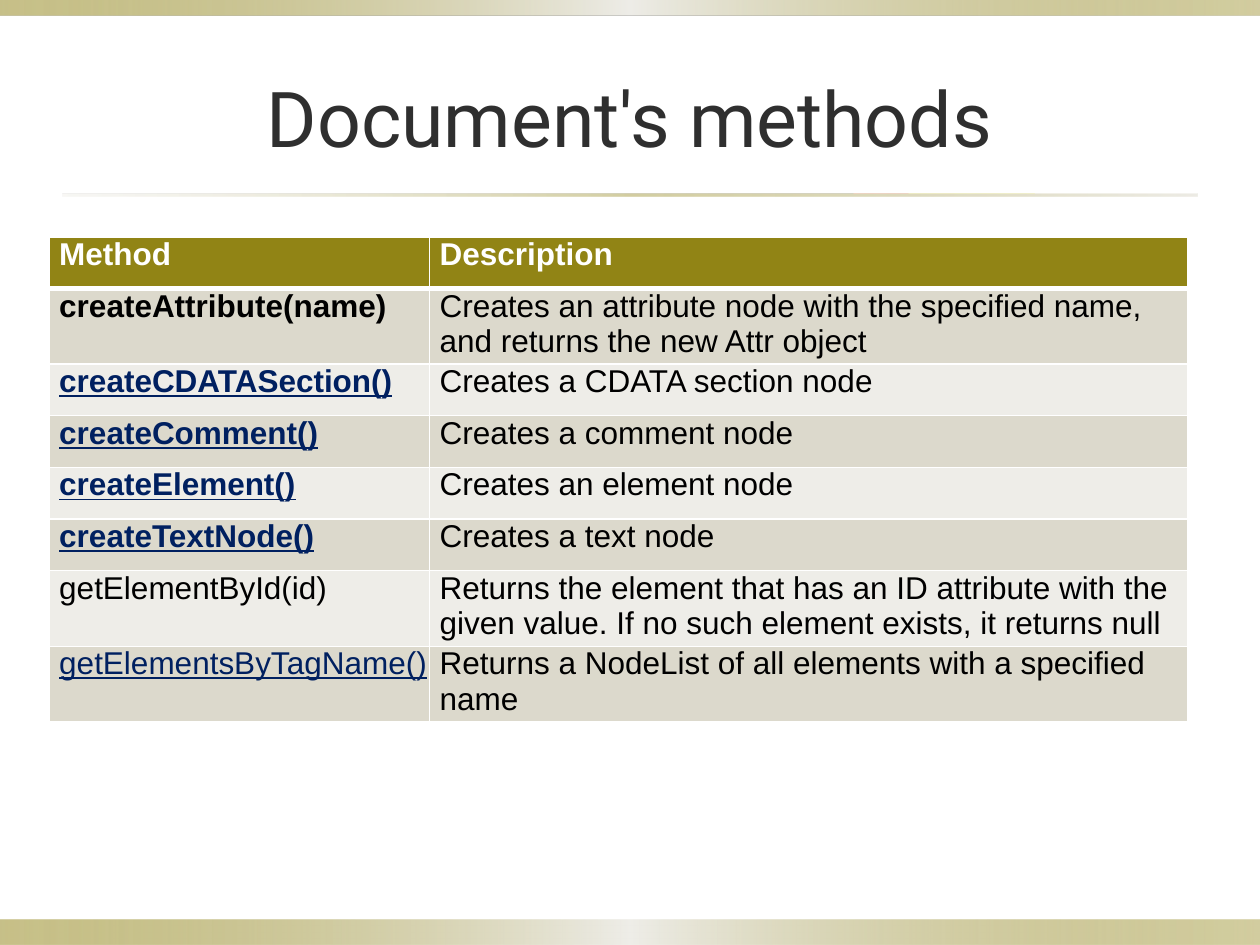
"""Build a slide with a table of the document's methods."""
from dataclasses import dataclass

from lxml.etree import SubElement as Sub
from pptx import Presentation as Deck
from pptx.dml.color import RGBColor as Rgb
from pptx.enum.shapes import MSO_SHAPE as Shape
from pptx.enum.text import MSO_ANCHOR as Anchor, PP_ALIGN as Align
from pptx.oxml.ns import qn
from pptx.util import Inches, Pt


@dataclass(frozen=True)
class Theme:
    """Colours, fonts and type sizes of the slide."""
    gold: str = "918415"
    sand: str = "DCD9CC"
    pale: str = "EEEDE8"
    white: str = "FFFFFF"
    black: str = "000000"
    navy: str = "002060"
    ink: str = "2F2F2F"
    head: str = "Roboto"
    body: str = "Arial"
    big: int = 44
    small: int = 18


THEME = Theme()
BAND = ((0, THEME.gold, 50), (50, THEME.pale, 100), (100, THEME.gold, 40))
RULE = ((0, THEME.sand, 20), (50, THEME.gold, 40), (100, THEME.sand, 50))
PLAIN = dict(color=THEME.black)
BOLD = dict(color=THEME.black, bold=True)
LINK = dict(color=THEME.navy, under=True)
STRONG = dict(LINK, bold=True)
HEAD = dict(color=THEME.white, bold=True)
COLS = (3.02, 6.02)
LOW, TALL = 0.41, 0.6
ROWS = (
    (LOW, "Method", HEAD, "Description"),
    (TALL, "createAttribute(name)", BOLD,
     "Creates an attribute node with the specified name, and returns the new Attr object"),
    (LOW, "createCDATASection()", STRONG, "Creates a CDATA section node"),
    (LOW, "createComment()", STRONG, "Creates a comment node"),
    (LOW, "createElement()", STRONG, "Creates an element node"),
    (LOW, "createTextNode()", STRONG, "Creates a text node"),
    (TALL, "getElementById(id)", PLAIN,
     "Returns the element that has an ID attribute with the given value. "
     "If no such element exists, it returns null"),
    (TALL, "getElementsByTagName()", LINK,
     "Returns a NodeList of all elements with a specified name"),
)


def write(frame, text, color, size=THEME.small, face=THEME.body,
          bold=False, under=False, align=Align.LEFT):
    """Put one formatted run of text into a frame."""
    para = frame.paragraphs[0]
    para.alignment = align
    run = para.add_run()
    run.text = text
    font = run.font
    font.name, font.size = face, Pt(size)
    font.bold, font.underline = bold, under
    font.color.rgb = Rgb.from_string(color)


def add_bar(slide, box, stops):
    """Add a borderless bar with a see-through gradient."""
    bar = slide.shapes.add_shape(Shape.RECTANGLE, *map(Inches, box))
    bar.shadow.inherit = False
    bar.line.fill.background()
    bar.fill.gradient()
    bar.fill.gradient_angle = 0
    grad = next(bar.element.iter(qn("a:gsLst")))
    for old in list(grad):
        grad.remove(old)
    for pos, color, alpha in stops:
        stop = Sub(grad, qn("a:gs"), pos=str(pos * 1000))
        tone = Sub(stop, qn("a:srgbClr"), val=color)
        Sub(tone, qn("a:alpha"), val=str(alpha * 1000))


def add_title(slide, text):
    """Place and fill the title."""
    title = slide.shapes.title
    title.left, title.top = Inches(0.5), Inches(0.3)
    title.width, title.height = Inches(9), Inches(1.25)
    title.text_frame.vertical_anchor = Anchor.MIDDLE
    write(title.text_frame, text, color=THEME.ink, size=THEME.big,
          face=THEME.head, align=Align.CENTER)


def add_edge(cell, side, width):
    """Draw one white border of a cell."""
    props = cell._tc.get_or_add_tcPr()
    line = Sub(props, qn(f"a:ln{side}"), w=str(Pt(width)))
    fill = Sub(line, qn("a:solidFill"))
    Sub(fill, qn("a:srgbClr"), val=THEME.white)


def style_cell(cell, fill, top, base):
    """Set the borders, margins and fill of a cell."""
    for side, width in zip("LRTB", (1, 1, top, base)):
        add_edge(cell, side, width)
    cell.margin_left = Inches(0.08)
    cell.margin_right = cell.margin_top = cell.margin_bottom = 0
    cell.fill.solid()
    cell.fill.fore_color.rgb = Rgb.from_string(fill)


def add_grid(slide):
    """Add the table of methods and their descriptions."""
    box = map(Inches, (0.39, 1.88, sum(COLS), sum(row[0] for row in ROWS)))
    grid = slide.shapes.add_table(len(ROWS), len(COLS), *box).table
    for col, width in zip(grid.columns, COLS):
        col.width = Inches(width)
    for num, (height, name, look, note) in enumerate(ROWS):
        grid.rows[num].height = Inches(height)
        shade = (THEME.pale, THEME.sand)[num % 2] if num else THEME.gold
        top, base = 3 if num == 1 else 1, 1 if num else 3
        texts = ((name, look), (note, PLAIN if num else HEAD))
        for col, (text, style) in enumerate(texts):
            cell = grid.cell(num, col)
            style_cell(cell, shade, top, base)
            write(cell.text_frame, text, **style)


def main():
    """Build and save the slide."""
    deck = Deck()
    deck.slide_width, deck.slide_height = Inches(10), Inches(7.5)
    slide = deck.slides.add_slide(deck.slide_layouts[5])
    add_bar(slide, (0, 7.3, 10, 0.2), BAND)
    add_bar(slide, (0, 0, 10, 0.12), BAND)
    add_bar(slide, (0.5, 1.54, 9, 0.02), RULE)
    add_title(slide, "Document's methods")
    add_grid(slide)
    deck.save("out.pptx")


if __name__ == "__main__":
    main()
